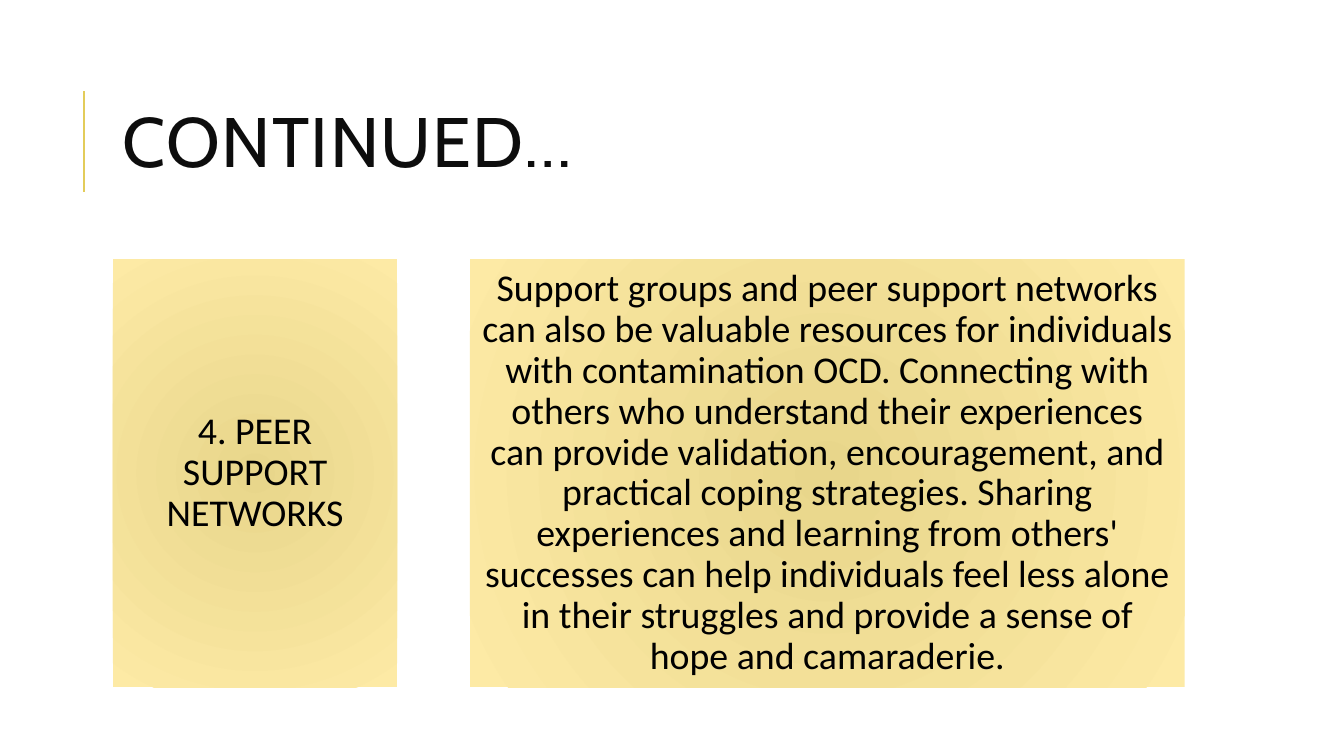
from lxml.etree import SubElement
from pptx import Presentation
from pptx.dml.color import RGBColor
from pptx.enum.shapes import MSO_CONNECTOR, MSO_SHAPE
from pptx.enum.text import MSO_ANCHOR, PP_ALIGN
from pptx.oxml.ns import qn
from pptx.util import Inches, Pt

# Content
TITLE = "CONTINUED…"
CARDS = [  # text, left, width
    ("4. PEER SUPPORT NETWORKS", 1.12, 2.82),
    ("Support groups and peer support networks can also be valuable resources "
     "for individuals with contamination OCD. Connecting with others who "
     "understand their experiences can provide validation, encouragement, and "
     "practical coping strategies. Sharing experiences and learning from "
     "others' successes can help individuals feel less alone in their "
     "struggles and provide a sense of hope and camaraderie.", 4.66, 7.09),
]
CARD_TOP, CARD_HEIGHT, CARD_INSET = 2.57, 4.25, 0.11

# Colours
ACCENT = RGBColor(0xE3, 0xCC, 0x5A)
TITLE_INK = RGBColor(0x0D, 0x0D, 0x0D)
CARD_INK = RGBColor(0, 0, 0)
CARD_CENTRE = RGBColor(0xE8, 0xD6, 0x8B)
CARD_EDGE = RGBColor(0xFD, 0xEA, 0xA5)


def style(paragraph, font_name, size, colour, spacing):
    paragraph.line_spacing = spacing
    font = paragraph.font
    font.name, font.size = font_name, Pt(size)
    font.color.rgb = colour


def fill_radially(shape, centre, edge):
    shape.fill.gradient()
    for stop, colour in zip(shape.fill.gradient_stops, (centre, edge)):
        stop.color.rgb = colour
    gradient = shape._element.spPr.find(qn("a:gradFill"))
    gradient.remove(gradient.find(qn("a:lin")))
    circle = SubElement(gradient, qn("a:path"), {"path": "circle"})
    SubElement(circle, qn("a:fillToRect"), dict.fromkeys("ltrb", "100000"))


def add_card(slide, text, left, width):
    card = slide.shapes.add_shape(
        MSO_SHAPE.RECTANGLE, Inches(left), Inches(CARD_TOP),
        Inches(width), Inches(CARD_HEIGHT))
    card.shadow.inherit = False
    card.line.fill.background()
    fill_radially(card, CARD_CENTRE, CARD_EDGE)
    frame = card.text_frame
    frame.word_wrap = True
    frame.vertical_anchor = MSO_ANCHOR.MIDDLE
    frame.margin_left = frame.margin_right = Inches(CARD_INSET)
    frame.margin_top = frame.margin_bottom = Inches(CARD_INSET)
    frame.text = text
    paragraph = frame.paragraphs[0]
    paragraph.alignment = PP_ALIGN.CENTER
    style(paragraph, "Calibri", 27, CARD_INK, 0.9)


def main():
    deck = Presentation()
    deck.slide_width, deck.slide_height = Inches(13.33), Inches(7.5)
    slide = deck.slides.add_slide(deck.slide_layouts[6])

    # Accent rule beside the title
    rule = slide.shapes.add_connector(
        MSO_CONNECTOR.STRAIGHT, Inches(0.83), Inches(1.9), Inches(0.83), Inches(0.9))
    rule.line.color.rgb = ACCENT
    rule.line.width = Pt(1.5)
    SubElement(rule._element.spPr, qn("a:effectLst"))

    # Title
    heading = slide.shapes.add_textbox(
        Inches(1.12), Inches(0.64), Inches(10.63), Inches(1.64)).text_frame
    heading.word_wrap = True
    heading.vertical_anchor = MSO_ANCHOR.MIDDLE
    heading.text = TITLE
    style(heading.paragraphs[0], "Cabin", 50, TITLE_INK, 0.8)
    heading.paragraphs[0].runs[0].font._element.set("spc", "100")

    # Topic and explanation cards
    for text, left, width in CARDS:
        add_card(slide, text, left, width)

    deck.save("out.pptx")


if __name__ == "__main__":
    main()
